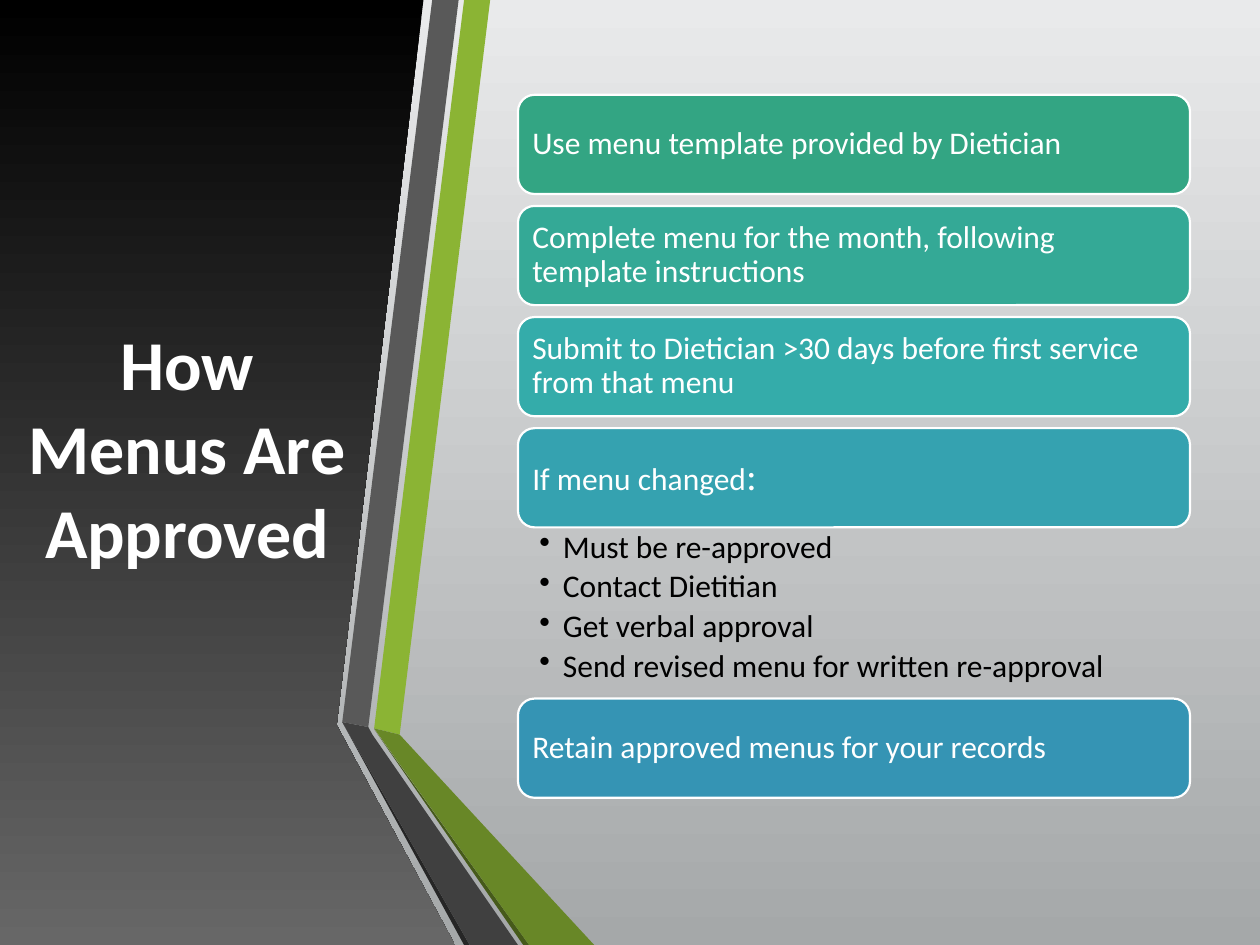
from lxml import etree
from pptx import Presentation
from pptx.dml.color import RGBColor
from pptx.enum import shapes, text
from pptx.oxml.ns import qn
from pptx.util import Pt

WHITE = RGBColor(0xFF, 0xFF, 0xFF)
BLACK = RGBColor(0, 0, 0)
SILVER = RGBColor(0xE9, 0xEA, 0xEB)
STEEL = RGBColor(0xA5, 0xA8, 0xA9)
SMOKE = RGBColor(0x67, 0x67, 0x67)
GREEN = RGBColor(0x8B, 0xB4, 0x34)
GREEN_FOLD = RGBColor(0x68, 0x87, 0x27)
GREEN_EDGE = RGBColor(0x46, 0x5A, 0x1A)
GRAY = RGBColor(0x59, 0x59, 0x59)
GRAY_FOLD = RGBColor(0x40, 0x40, 0x40)
GRAY_EDGE = RGBColor(0x26, 0x26, 0x26)

WIDTH, HEIGHT = 720, 540
CARD_LEFT, CARD_TOP, CARD_WIDTH, CARD_HEIGHT = 296, 54.2, 384, 56.7
GAP, LIST_HEIGHT = 6.8, 97.8

PANEL = [(0, 0), (242, 0), (192.4, 414.4), (260, HEIGHT), (0, HEIGHT)]

RIBBONS = [
    (GREEN, [(213.8, 416.2), (228.4, 419.8), (280.1, 0), (265.2, 0)]),
    (GRAY, [(262.1, 0), (247, 0), (195.6, 412.6), (210.5, 415.5)]),
    (GRAY_EDGE, [(195.6, 412.6), (265.2, HEIGHT), (268.4, HEIGHT)]),
    (GREEN_EDGE, [(213.8, 416.6), (299, HEIGHT), (302.4, HEIGHT)]),
    (GREEN_FOLD, [(213.8, 416.2), (302.4, HEIGHT), (339.6, HEIGHT), (228.4, 419.8)]),
    (GRAY_FOLD, [(296, HEIGHT), (213, 420), (210.5, 415.5), (195.6, 412.6),
                 (268.4, HEIGHT)]),
]

# Each card: colour, text spans with their sizes, and bullets below it
CARDS = [
    (RGBColor(0x33, 0xA5, 0x83), [("Use menu template provided by Dietician", 18)], []),
    (RGBColor(0x34, 0xA9, 0x96),
     [("Complete menu for the month, following template instructions", 18)], []),
    (RGBColor(0x34, 0xAC, 0xAA),
     [("Submit to Dietician >30 days before first service from that menu", 18)], []),
    (RGBColor(0x35, 0xA2, 0xB0), [("If menu changed", 18), (":", 22)],
     ["Must be re-approved", "Contact Dietitian", "Get verbal approval",
      "Send revised menu for written re-approval"]),
    (RGBColor(0x35, 0x94, 0xB4), [("Retain approved menus for your records", 18)], []),
]


class SlideBuilder:
    font = "Calibri"

    def __init__(self, deck):
        self.slide = deck.slides.add_slide(deck.slide_layouts[5])

    def gradient(self, fill, top, bottom):
        fill.gradient()
        fill.gradient_angle = 270
        for stop, color in zip(fill.gradient_stops, (top, bottom)):
            stop.color.rgb = color

    def style(self, font, size, color, bold=False):
        font.name, font.size, font.bold = self.font, Pt(size), bold
        font.color.rgb = color

    def frame(self, box, margins, anchor):
        frame = box.text_frame
        frame.word_wrap = True
        frame.auto_size = text.MSO_AUTO_SIZE.NONE
        frame.vertical_anchor = anchor
        (frame.margin_left, frame.margin_top,
         frame.margin_right, frame.margin_bottom) = map(Pt, margins)
        return frame

    def polygon(self, points, color=None):
        start, *rest = [(Pt(x), Pt(y)) for x, y in points]
        outline = self.slide.shapes.build_freeform(*start)
        outline.add_line_segments(rest, close=True)
        shape = outline.convert_to_shape()
        shape.shadow.inherit = False
        shape.line.fill.background()
        if color is not None:
            shape.fill.solid()
            shape.fill.fore_color.rgb = color
        return shape

    def title(self, words, left, top, width, height, above):
        box = self.slide.shapes.title
        box.left, box.top, box.width, box.height = map(Pt, (left, top, width, height))
        frame = self.frame(box, (7.2, 3.6, 7.2, 3.6), text.MSO_ANCHOR.MIDDLE)
        para = frame.paragraphs[0]
        para.text = words
        para.alignment = text.PP_ALIGN.CENTER
        self.style(para.font, 40, WHITE, bold=True)
        above.element.addnext(box.element)

    def card(self, top, color, spans):
        box = self.slide.shapes.add_shape(
            shapes.MSO_SHAPE.ROUNDED_RECTANGLE,
            *map(Pt, (CARD_LEFT, top, CARD_WIDTH, CARD_HEIGHT)))
        box.shadow.inherit = False
        box.fill.solid()
        box.fill.fore_color.rgb = color
        box.line.color.rgb = WHITE
        box.line.width = Pt(1.25)
        frame = self.frame(box, (5.4,) * 4, text.MSO_ANCHOR.MIDDLE)
        para = frame.paragraphs[0]
        para.alignment = text.PP_ALIGN.LEFT
        para.line_spacing = 0.9
        self.style(para.font, spans[0][1], WHITE)
        for words, size in spans:
            span = para.add_run()
            span.text = words
            if size != spans[0][1]:
                span.font.size = Pt(size)

    def bullets(self, top, items):
        box = self.slide.shapes.add_textbox(
            *map(Pt, (CARD_LEFT, top, CARD_WIDTH, LIST_HEIGHT)))
        frame = self.frame(box, (12.2, 2, 10, 2), text.MSO_ANCHOR.TOP)
        for index, item in enumerate(items):
            para = frame.add_paragraph() if index else frame.paragraphs[0]
            para.text = item
            para.level = 1
            para.line_spacing = 0.9
            para.space_after = Pt(3.3)
            props = para._p.get_or_add_pPr()
            props.set("marL", str(Pt(13.5)))
            props.set("indent", str(Pt(-13.5)))
            etree.SubElement(props, qn("a:buChar")).set("char", "•")
            self.style(para.font, 18, BLACK)


def main():
    deck = Presentation()
    deck.slide_width, deck.slide_height = Pt(WIDTH), Pt(HEIGHT)
    page = SlideBuilder(deck)

    # Background, dark side panel and title
    page.gradient(page.slide.background.fill, SILVER, STEEL)
    panel = page.polygon(PANEL)
    page.gradient(panel.fill, BLACK, SMOKE)
    page.title("How Menus Are Approved", 8.6, 54, 196.6, 402, above=panel)

    # Folded ribbons
    for color, points in RIBBONS:
        page.polygon(points, color)

    # Steps, stacked from the top
    top = CARD_TOP
    for color, spans, items in CARDS:
        page.card(top, color, spans)
        top += CARD_HEIGHT
        if items:
            page.bullets(top, items)
            top += LIST_HEIGHT
        else:
            top += GAP

    deck.save("out.pptx")


if __name__ == "__main__":
    main()
